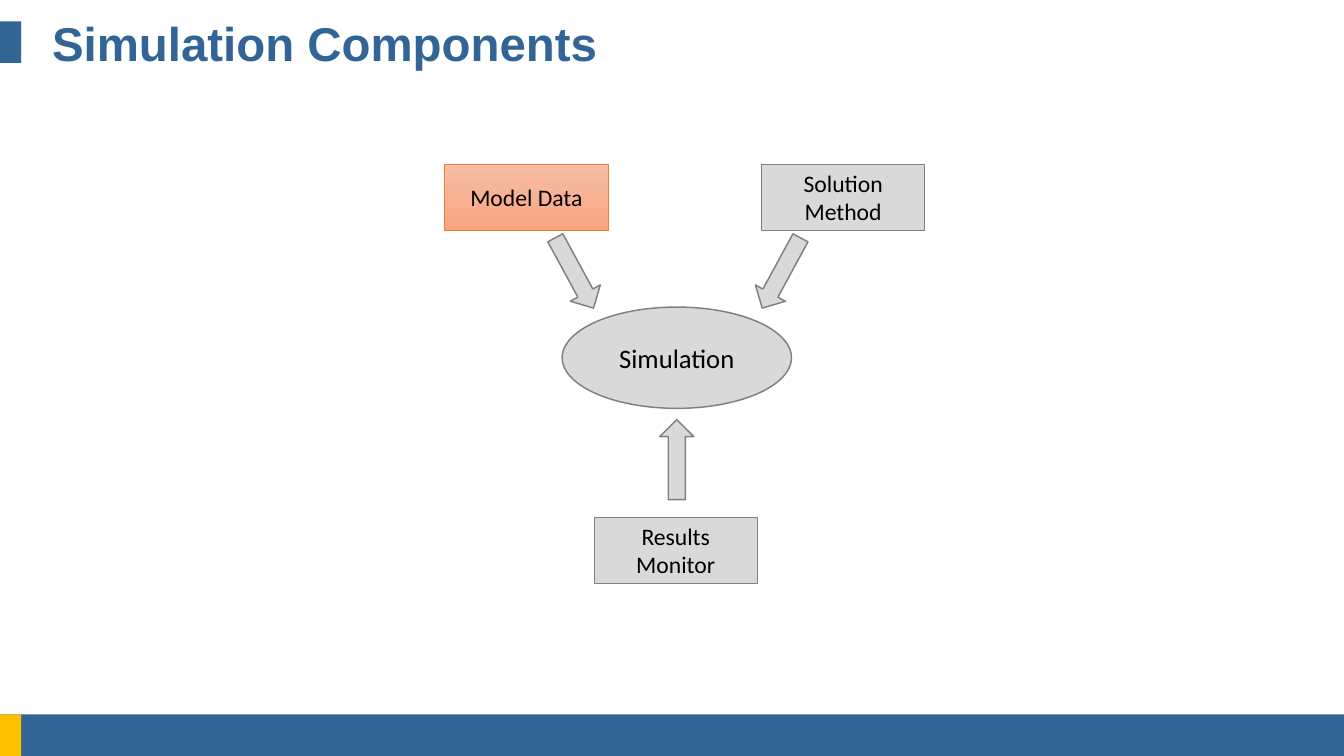
import pptx
import pptx.util
import pptx.dml.color
import pptx.enum.shapes
import pptx.enum.text

Inches = pptx.util.Inches
Pt = pptx.util.Pt
KIND = pptx.enum.shapes.MSO_SHAPE
WIDE, HIGH = 12.6, 7.09
BAND, TAB = 0.39, 0.2
COLORS = {
    "blue": "326496",
    "gold": "FFC000",
    "gray": "D9D9D9",
    "edge": "808080",
    "orange": "ED7D31",
    "light": "F7BDA5",
    "deep": "F8A582",
    "black": "000000",
}


def color(name):
    return pptx.dml.color.RGBColor.from_string(COLORS[name])


def write(shape, text, size, font, tint, bold=False, align="CENTER"):
    frame = shape.text_frame
    frame.word_wrap = True
    frame.vertical_anchor = pptx.enum.text.MSO_ANCHOR.MIDDLE
    frame.text = text
    para = frame.paragraphs[0]
    para.alignment = getattr(pptx.enum.text.PP_ALIGN, align)
    face = para.runs[0].font
    face.name, face.size, face.bold = font, Pt(size), bold
    face.color.rgb = color(tint)


def draw(slide, kind, box, fill, edge=None, weight=1):
    shape = slide.shapes.add_shape(kind, *map(Inches, box))
    shape.shadow.inherit = False
    shape.fill.solid()
    shape.fill.fore_color.rgb = color(fill)
    if edge:
        shape.line.color.rgb = color(edge)
        shape.line.width = Pt(weight)
    else:
        shape.line.fill.background()
    return shape


def add_footer(slide, left, top, width, height):
    draw(slide, KIND.RECTANGLE, (left, top, width, height), "blue")
    draw(slide, KIND.RECTANGLE, (left, top, TAB, height), "gold")


def add_title(slide, left, top, width, height):
    draw(slide, KIND.RECTANGLE, (left, top, TAB, height), "blue")
    box = (left + 0.39, top, width - 0.79, height)
    title = slide.shapes.add_textbox(*map(Inches, box))
    write(title, "Simulation Components", 32, "Arial", "blue", True, "LEFT")


def add_model(slide, left, top):
    parts = [
        ("Model Data", 0, 0, "orange"),
        ("Solution Method", 2.97, 0, "edge"),
        ("Results Monitor", 1.4, 3.31, "edge"),
    ]
    for text, x, y, edge in parts:
        box = (left + x, top + y, 1.53, 0.62)
        part = draw(slide, KIND.RECTANGLE, box, "gray", edge, 0.5)
        write(part, text, 16, "Calibri", "black")
        if edge == "orange":
            part.fill.gradient()
            part.fill.gradient_angle = 270
            for stop, tint in zip(part.fill.gradient_stops, ("light", "deep")):
                stop.color.rgb = color(tint)

    core = draw(slide, KIND.OVAL, (left + 1.1, top + 1.34, 2.15, 0.95), "gray", "edge")
    write(core, "Simulation", 18, "Calibri", "black")

    for x, y, turn in [(0.84, 0.86, 61.5), (2.78, 0.86, 118.5), (1.8, 2.61, 270)]:
        box = (left + x, top + y, 0.75, 0.32)
        arrow = draw(slide, KIND.RIGHT_ARROW, box, "gray", "edge")
        arrow.rotation = turn


def main():
    deck = pptx.Presentation()
    deck.slide_width, deck.slide_height = Inches(WIDE), Inches(HIGH)
    slide = deck.slides.add_slide(deck.slide_layouts[6])
    add_footer(slide, 0, HIGH - BAND, WIDE, BAND)
    add_title(slide, 0, 0.2, WIDE, BAND)
    add_model(slide, 4.17, 1.54)
    deck.save("out.pptx")


if __name__ == "__main__":
    main()
